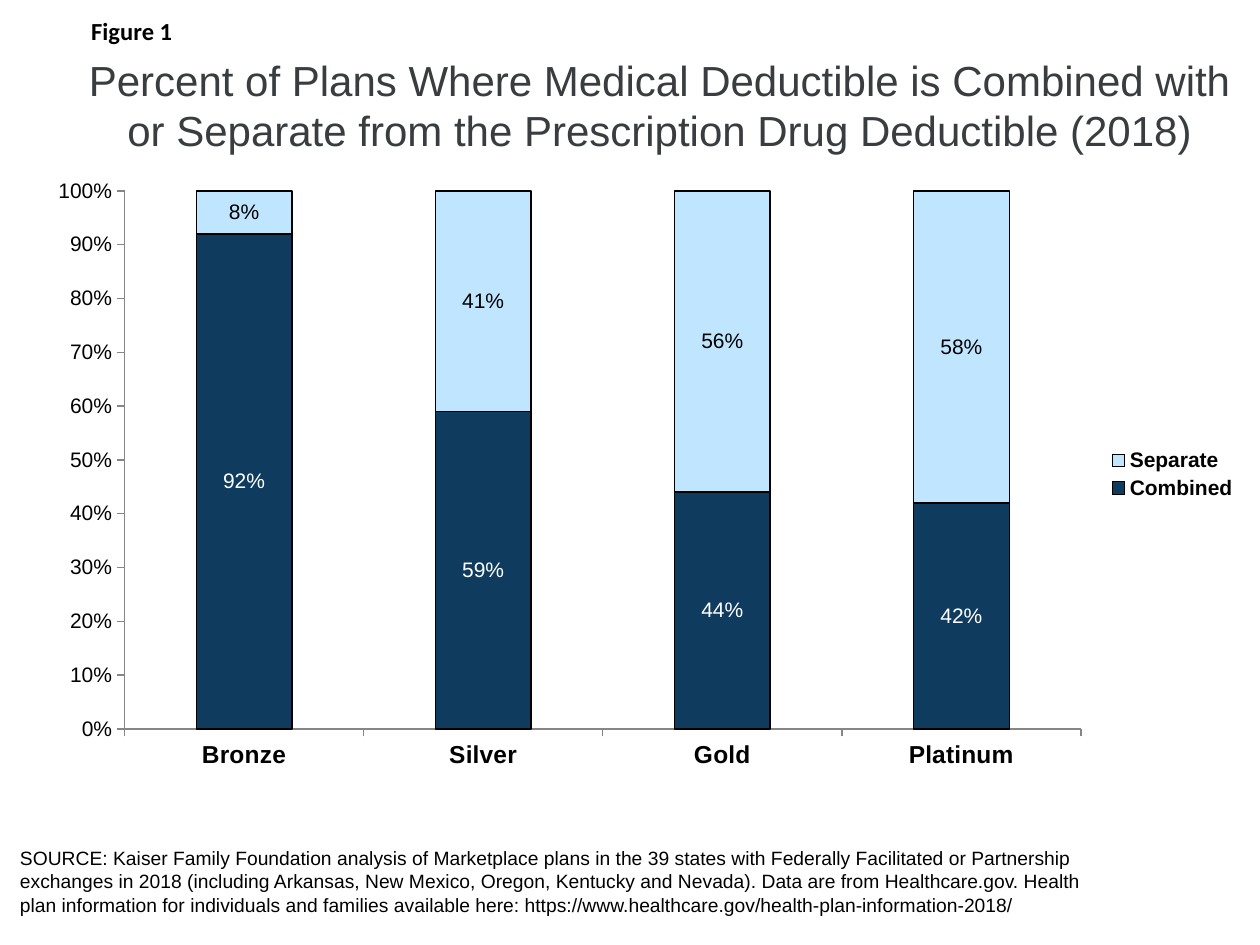
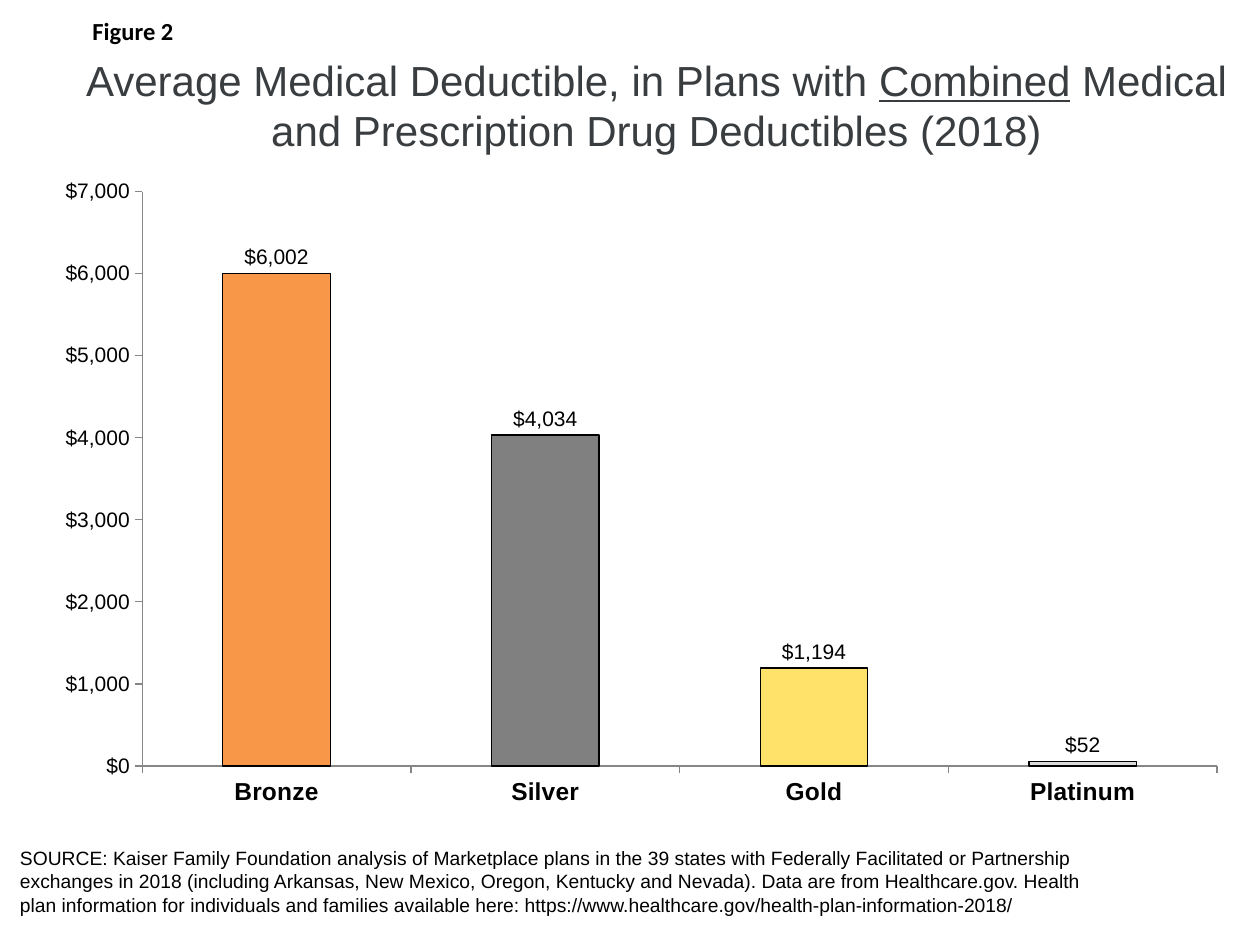
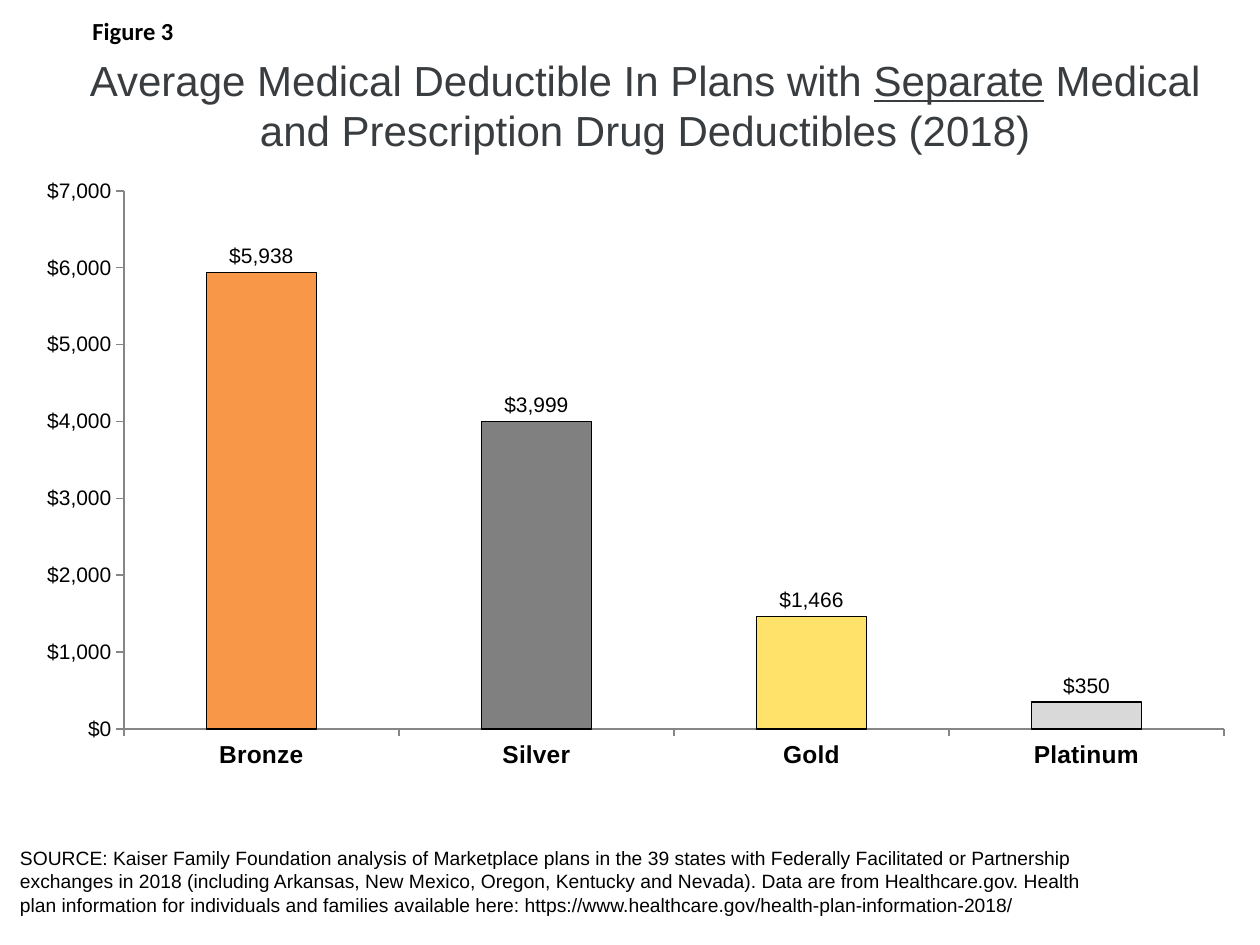
from dataclasses import dataclass
from pptx import Presentation
from pptx.chart.data import CategoryChartData
from pptx.dml.color import RGBColor
from pptx.enum.chart import (XL_CHART_TYPE as ChartType, XL_LABEL_POSITION as LabelPos,
                             XL_LEGEND_POSITION as LegendPos, XL_TICK_MARK as Tick)
from pptx.enum.text import MSO_ANCHOR, MSO_AUTO_SIZE as AutoSize, PP_ALIGN as Align
from pptx.util import Inches, Pt


@dataclass(frozen=True)
class Theme:
    body_font: str = "Arial"
    figure_font: str = "Calibri"
    black: str = "000000"
    white: str = "FFFFFF"
    heading: str = "393D40"
    axis: str = "868686"
    combined: str = "0E3B5E"
    separate: str = "C0E6FF"
    bar: str = "082338"
    tiers: tuple = ("F79747", "808080", "FEE26A", "D9D9D9")
    heading_size: int = 24
    category_size: int = 14
    figure_size: int = 14
    value_size: int = 12
    source_size: int = 11
    chart_size: int = 18
    outline: float = 0.75


THEME = Theme()

# Content
SOURCE = (
    "SOURCE: Kaiser Family Foundation analysis of Marketplace plans in the 39 states with "
    "Federally Facilitated or Partnership exchanges in 2018 (including Arkansas, New Mexico, "
    "Oregon, Kentucky and Nevada). Data are from Healthcare.gov. Health plan information for "
    "individuals and families available here: "
    "https://www.healthcare.gov/health-plan-information-2018/"
)
TIERS = ["Bronze", "Silver", "Gold", "Platinum"]
PERCENT, DOLLARS = "0%", '"$"#,##0'

# Each series: name, values, fill, label colour, colours of single bars
FIGURES = [
    {
        "title": ["Percent of Plans Where Medical Deductible is Combined with or Separate "
                  "from the Prescription Drug Deductible (2018)"],
        "title_left": 0.57, "figure_left": 0.17, "chart_box": (0.27, 1.33, 9.65, 4.87),
        "type": ChartType.COLUMN_STACKED_100, "format": PERCENT, "top": 1, "step": 0.1,
        "series": [
            ("Combined", [0.92, 0.59, 0.44, 0.42], THEME.combined, THEME.white, ()),
            ("Separate", [0.08, 0.41, 0.56, 0.58], THEME.separate, THEME.black, ()),
        ],
    },
    {
        "title": ["Average Medical Deductible, in Plans with ", "Combined",
                  " Medical and Prescription Drug Deductibles (2018)"],
        "title_left": 0.52, "figure_left": 0.18, "chart_box": (0.33, 1.33, 9.52, 5.17),
        "type": ChartType.COLUMN_CLUSTERED, "format": DOLLARS, "top": 7000, "step": 1000,
        "series": [("Series 1", [6002, 4034, 1194, 52], THEME.bar, THEME.black, THEME.tiers)],
    },
    {
        "title": ["Average Medical Deductible In Plans with ", "Separate",
                  " Medical and Prescription Drug Deductibles (2018)"],
        "title_left": 0.34, "figure_left": 0.18, "chart_box": (0.18, 1.33, 9.73, 4.87),
        "type": ChartType.COLUMN_CLUSTERED, "format": DOLLARS, "top": 7000, "step": 1000,
        "series": [("Series 1", [5938, 3999, 1466, 350], THEME.bar, THEME.black, THEME.tiers)],
    },
]
TITLE_RIGHT = 9.9


# Shared styling
def style_font(font, size, color=THEME.black, bold=False, name=THEME.body_font):
    font.name, font.size, font.bold = name, Pt(size), bold
    font.color.rgb = RGBColor.from_string(color)


def style_bar(bar, color):
    bar.format.fill.solid()
    bar.format.fill.fore_color.rgb = RGBColor.from_string(color)
    bar.format.line.color.rgb = RGBColor.from_string(THEME.black)
    bar.format.line.width = Pt(THEME.outline)


def style_axis(axis, size, bold=False):
    axis.has_major_gridlines = False
    axis.major_tick_mark, axis.minor_tick_mark = Tick.OUTSIDE, Tick.NONE
    axis.format.line.color.rgb = RGBColor.from_string(THEME.axis)
    style_font(axis.tick_labels.font, size, bold=bold)


# Slide parts
def add_caption(slide, text, box, align, **font):
    frame = slide.shapes.add_textbox(*map(Inches, box)).text_frame
    frame.word_wrap = True
    frame.auto_size = AutoSize.SHAPE_TO_FIT_TEXT
    paragraph = frame.paragraphs[0]
    paragraph.text = text
    paragraph.alignment = align
    style_font(paragraph.runs[0].font, **font)


def fill_title(slide, parts, left):
    title = slide.shapes.title
    title.left, title.top = Inches(left), Inches(0.33)
    title.width, title.height = Inches(TITLE_RIGHT - left), Inches(1)
    frame = title.text_frame
    frame.word_wrap = True
    frame.auto_size = AutoSize.NONE
    frame.vertical_anchor = MSO_ANCHOR.MIDDLE
    paragraph = frame.paragraphs[0]
    paragraph.alignment = Align.CENTER
    for position, part in enumerate(parts):
        run = paragraph.add_run()
        run.text = part
        style_font(run.font, THEME.heading_size, THEME.heading)
        if position == 1:  # the middle part is the stressed word
            run.font.underline = True


def add_deductible_chart(slide, figure):
    data = CategoryChartData(number_format=figure["format"])
    data.categories = TIERS
    for name, values, *_ in figure["series"]:
        data.add_series(name, values)
    chart = slide.shapes.add_chart(
        figure["type"], *map(Inches, figure["chart_box"]), data).chart
    chart.has_title = False
    style_font(chart.font, THEME.chart_size)

    stacked = len(figure["series"]) > 1
    chart.has_legend = stacked
    if stacked:
        chart.legend.position = LegendPos.RIGHT
        chart.legend.include_in_layout = False
        style_font(chart.legend.font, THEME.value_size, bold=True)

    style_axis(chart.category_axis, THEME.category_size, bold=True)
    amounts = chart.value_axis
    style_axis(amounts, THEME.value_size)
    amounts.minimum_scale, amounts.maximum_scale = 0, figure["top"]
    amounts.major_unit = figure["step"]
    amounts.tick_labels.number_format = figure["format"]
    amounts.tick_labels.number_format_is_linked = False

    plot = chart.plots[0]
    plot.vary_by_categories = False
    plot.gap_width = 150
    plot.overlap = 100 if stacked else 0
    for series, (_, _, color, label_color, tier_colors) in zip(plot.series, figure["series"]):
        style_bar(series, color)
        for index, tier_color in enumerate(tier_colors):
            style_bar(series.points[index], tier_color)
        labels = series.data_labels
        labels.show_value = True
        labels.number_format = figure["format"]
        labels.number_format_is_linked = False
        labels.position = LabelPos.CENTER if stacked else LabelPos.OUTSIDE_END
        style_font(labels.font, THEME.value_size, label_color)


def main():
    deck = Presentation()
    deck.slide_width, deck.slide_height = Inches(10), Inches(7.5)
    title_only = deck.slide_layouts[5]
    for number, figure in enumerate(FIGURES, start=1):
        slide = deck.slides.add_slide(title_only)
        add_caption(slide, SOURCE, (0.06, 6.67, 8.78, 0.66), Align.LEFT,
                    size=THEME.source_size)
        add_deductible_chart(slide, figure)
        fill_title(slide, figure["title"], figure["title_left"])
        add_caption(slide, f"Figure {number}", (figure["figure_left"], 0.08, 1.75, 0.34),
                    Align.CENTER, size=THEME.figure_size, bold=True, name=THEME.figure_font)
    deck.save("out.pptx")


if __name__ == "__main__":
    main()
